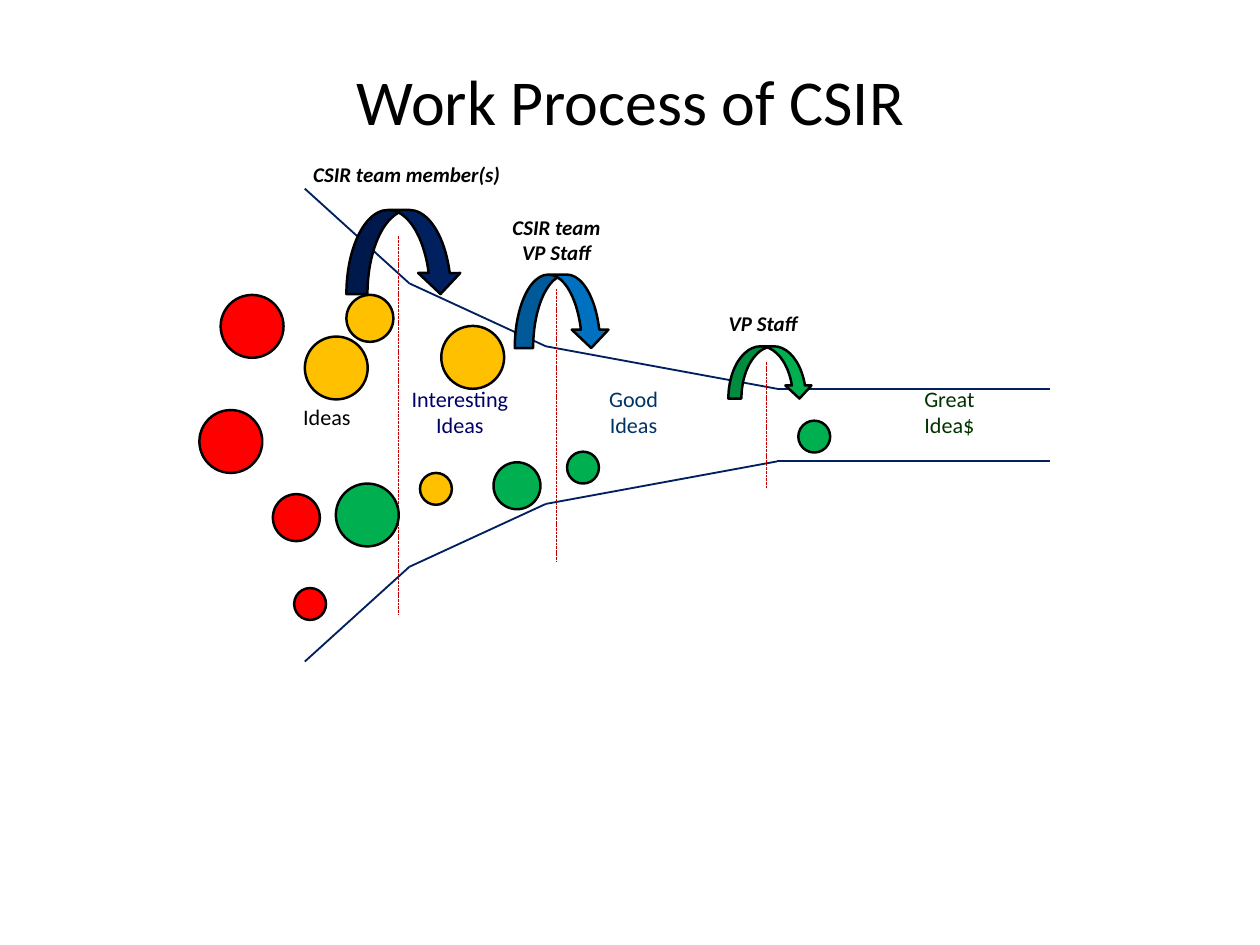
from dataclasses import dataclass
from itertools import pairwise
from lxml import etree
from pptx import Presentation, util as u
from pptx.dml.color import RGBColor
from pptx.enum import dml, shapes, text
from pptx.oxml.ns import qn


@dataclass(frozen=True)
class Theme:
    """Colours, font and type sizes of the slide."""
    font: str = "Calibri"
    title: int = 52
    stage: int = 18
    team: int = 17
    black: str = "000000"
    navy: str = "002060"
    blue: str = "0070C0"
    green: str = "00B050"
    amber: str = "FFC000"
    red: str = "FF0000"
    gate: str = "C00000"
    violet: str = "000066"
    steel: str = "003366"
    forest: str = "003300"


T = Theme()
SMALL, MID, BIG = 0.36, 0.53, 0.71


def put_text(slide, box, lines, size, color, bold=False, pad=(0.1, 0.05), mid=False):
    """Place centred lines of text in a box."""
    frame = slide.shapes.add_textbox(*map(u.Inches, box)).text_frame
    frame.word_wrap = mid
    frame.auto_size = text.MSO_AUTO_SIZE.NONE
    frame.margin_left = frame.margin_right = u.Inches(pad[0])
    frame.margin_top = frame.margin_bottom = u.Inches(pad[1])
    if mid:
        frame.vertical_anchor = text.MSO_ANCHOR.MIDDLE
    for n, line in enumerate(lines):
        para = frame.add_paragraph() if n else frame.paragraphs[0]
        para.text = line
        para.alignment = text.PP_ALIGN.CENTER
        font = para.font
        font.name, font.size = T.font, u.Pt(size)
        font.bold = font.italic = bold
        font.color.rgb = RGBColor.from_string(color)


def put_line(slide, start, end, color, width, dash=None):
    """Draw a straight line between two points."""
    line = slide.shapes.add_connector(
        shapes.MSO_CONNECTOR.STRAIGHT, *map(u.Inches, (*start, *end)))
    line.line.color.rgb = RGBColor.from_string(color)
    line.line.width = u.Pt(width)
    if dash:
        line.line.dash_style = dash
    etree.SubElement(line._element.spPr, qn("a:effectLst"))


def put_shape(slide, kind, box, color):
    """Draw a filled shape with a black outline."""
    shape = slide.shapes.add_shape(kind, *map(u.Inches, box))
    shape.shadow.inherit = False
    shape.fill.solid()
    shape.fill.fore_color.rgb = RGBColor.from_string(color)
    shape.line.color.rgb = RGBColor.from_string(T.black)
    shape.line.width = u.Pt(2)


def add_title(slide, box):
    """Write the slide title."""
    put_text(slide, box, ["Work Process of CSIR"], T.title, T.black,
             pad=(0.06, 0.06), mid=True)


def add_funnel(slide, box):
    """Draw the mirrored funnel walls and the dashed gates."""
    left, top, _, high = box
    axis = top + high / 2
    wall = [(0, 2.67), (1.18, 1.6), (2.72, 0.89), (5.33, 0.41), (8.41, 0.41)]
    for side in (-1, 1):
        points = [(left + x, axis + side * gap) for x, gap in wall]
        for start, end in pairwise(points):
            put_line(slide, start, end, T.navy, 1.5)
    for x, half in [(5.21, 0.71), (2.84, 1.54), (1.06, 2.13)]:
        put_line(slide, (left + x, axis - half), (left + x, axis + half),
                 T.gate, 0.75, dml.MSO_LINE.SQUARE_DOT)


def add_stages(slide, box):
    """Name the stage between each pair of gates."""
    left, top, _, high = box
    stages = [
        (-0.12, 2.38, 0.74, ["Ideas"], T.black),
        (1.06, 2.17, 1.38, ["Interesting", "Ideas"], T.violet),
        (3.3, 2.17, 0.82, ["Good", "Ideas"], T.steel),
        (6.86, 2.17, 0.83, ["Great", "Idea$"], T.forest),
    ]
    for x, y, wide, lines, color in stages:
        put_text(slide, (left + x, top + y, wide, 0.1 + 0.3 * len(lines)),
                 lines, T.stage, color)


def add_reviews(slide, box):
    """Draw the arrow over each gate and name its reviewers."""
    left, top, _, _ = box
    arrows = [
        (0.47, 0.24, 1.3, 0.95, T.navy),
        (2.37, 0.97, 1.07, 0.83, T.blue),
        (4.78, 1.78, 0.95, 0.59, T.green),
    ]
    for x, y, wide, high, color in arrows:
        put_shape(slide, shapes.MSO_SHAPE.CURVED_DOWN_ARROW,
                  (left + x, top + y, wide, high), color)
    teams = [
        (0, -0.35, 2.3, ["CSIR team member(s)"]),
        (2.25, 0.24, 1.18, ["CSIR team", "VP Staff"]),
        (4.68, 1.33, 0.98, ["VP Staff"]),
    ]
    for x, y, wide, lines in teams:
        put_text(slide, (left + x, top + y, wide, 0.11 + 0.28 * len(lines)),
                 lines, T.team, T.black, bold=True)


def add_balls(slide, box):
    """Scatter the idea balls through the funnel."""
    left, top, _, _ = box
    balls = [
        (1.3, 3.21, SMALL, T.amber), (0.47, 1.2, MID, T.amber),
        (0, 1.67, BIG, T.amber), (2.96, 2.97, SMALL, T.green),
        (2.13, 3.09, MID, T.green), (0.35, 3.33, BIG, T.green),
        (-0.12, 4.51, SMALL, T.red), (-0.36, 3.45, MID, T.red),
        (-0.95, 1.2, BIG, T.red), (1.54, 1.55, BIG, T.amber),
        (5.57, 2.62, SMALL, T.green), (-1.19, 2.5, BIG, T.red),
    ]
    for x, y, size, color in balls:
        put_shape(slide, shapes.MSO_SHAPE.OVAL,
                  (left + x, top + y, size, size), color)


def main():
    """Build and save the slide."""
    deck = Presentation()
    deck.slide_width, deck.slide_height = u.Inches(14.22), u.Inches(10.67)
    slide = deck.slides.add_slide(deck.slide_layouts[6])
    add_title(slide, (1.07, 0.36, 12.09, 1.54))
    funnel = (3.44, 2.13, 8.41, 5.34)
    for add in (add_funnel, add_stages, add_reviews, add_balls):
        add(slide, funnel)
    deck.save("out.pptx")


if __name__ == "__main__":
    main()
